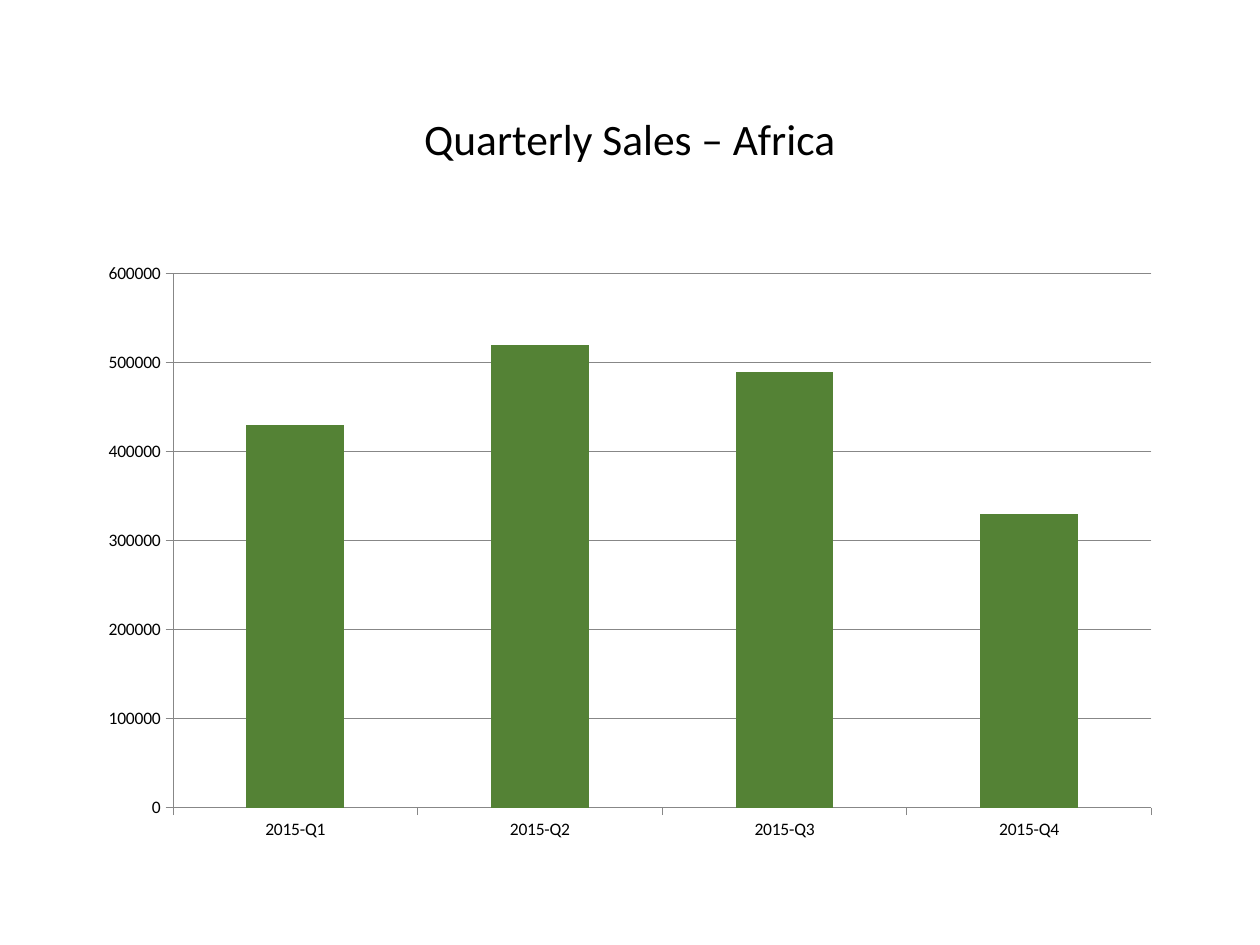
from pptx import Presentation
from pptx.chart.data import CategoryChartData
from pptx.dml.color import RGBColor
from pptx.enum.chart import XL_CHART_TYPE, XL_TICK_MARK
from pptx.enum.text import MSO_ANCHOR, PP_ALIGN
from pptx.util import Inches, Pt

COLUMNS = XL_CHART_TYPE.COLUMN_CLUSTERED
OUTSIDE, NO_TICK = XL_TICK_MARK.OUTSIDE, XL_TICK_MARK.NONE
MIDDLE, CENTER = MSO_ANCHOR.MIDDLE, PP_ALIGN.CENTER

# Content
TITLE = "Quarterly Sales – Africa"
SALES = {
    "2015-Q1": 430000,
    "2015-Q2": 520000,
    "2015-Q3": 490000,
    "2015-Q4": 330000,
}
FONT = "Calibri"
COLORS = {"text": "000000", "bar": "548235", "line": "878787"}
LEFT, WIDTH = Inches(0.69), Inches(8.62)


def rgb(name):
    return RGBColor.from_string(COLORS[name])


def style_font(font, size):
    font.name = FONT
    font.size = Pt(size)
    font.bold = False
    font.color.rgb = rgb("text")


def style_line(line):
    line.color.rgb = rgb("line")
    line.width = Pt(0.5)


prs = Presentation()
prs.slide_width, prs.slide_height = Inches(10), Inches(7.5)
s = prs.slides.add_slide(prs.slide_layouts[5])

# Title
title = s.shapes.title
title.left, title.top = LEFT, Inches(0.4)
title.width, title.height = WIDTH, Inches(1.45)
tf = title.text_frame
tf.text = TITLE
tf.vertical_anchor = MIDDLE
p = tf.paragraphs[0]
p.alignment = CENTER
p.line_spacing = 0.9
style_font(p.runs[0].font, 24.8)

# Sales chart
data = CategoryChartData()
data.categories = list(SALES)
data.add_series("Series 1", list(SALES.values()))
chart = s.shapes.add_chart(
    COLUMNS, LEFT, Inches(2), WIDTH, Inches(4.76), data
).chart
chart.has_title = False
chart.has_legend = False
style_font(chart.font, 10)

plot = chart.plots[0]
plot.gap_width = 150
plot.vary_by_categories = False
fill = plot.series[0].format.fill
fill.solid()
fill.fore_color.rgb = rgb("bar")

# Axes and gridlines
for axis in (chart.category_axis, chart.value_axis):
    axis.major_tick_mark = OUTSIDE
    axis.minor_tick_mark = NO_TICK
    style_line(axis.format.line)

value_axis = chart.value_axis
value_axis.minimum_scale, value_axis.maximum_scale = 0, 600000
value_axis.major_unit = 100000
value_axis.has_major_gridlines = True
style_line(value_axis.major_gridlines.format.line)

prs.save("out.pptx")
